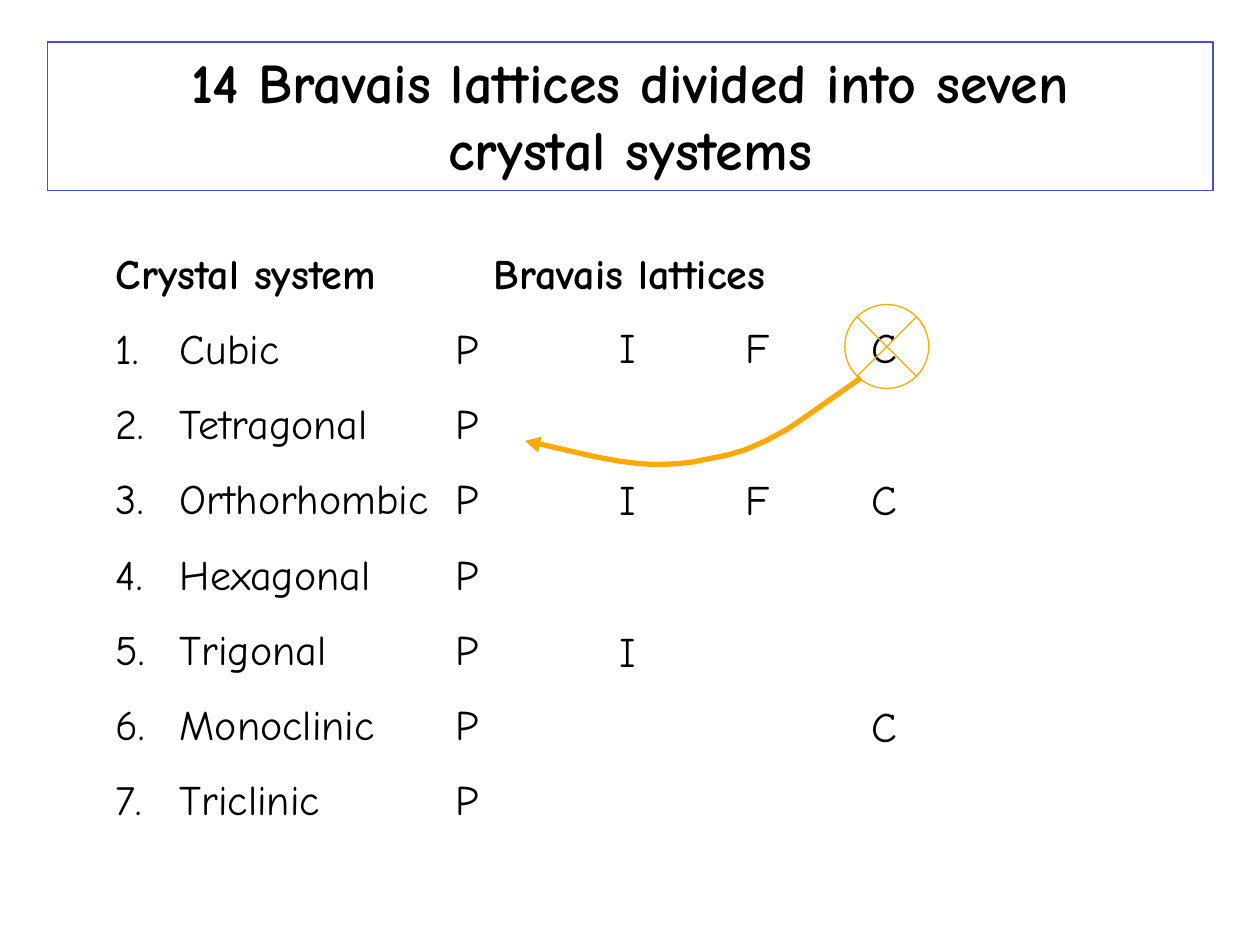
from lxml import etree
from pptx import Presentation
from pptx.dml.color import RGBColor
from pptx.enum import shapes, text
from pptx.oxml.ns import qn
from pptx.util import Pt

FONT = "Comic Neue"
BLACK = RGBColor(0x00, 0x00, 0x00)
BLUE = RGBColor(0x43, 0x4D, 0xD6)
ORANGE = RGBColor(0xFF, 0xA9, 0x00)

SYSTEMS = ["Cubic", "Tetragonal", "Orthorhombic", "Hexagonal",
           "Trigonal", "Monoclinic", "Triclinic"]
# Lattice letter: left edge and the rows (from 0) in which it stands
LATTICES = {"I": (354.25, [0, 2, 4]),
            "F": (426.25, [0, 2]),
            "C": (498.25, [0, 2, 5])}
FIRST_ROW, ROW_STEP = 183, 43.3
INDENT, LATTICE_TAB = 36.5, 216.7

CURVE = [(492, 216), (463.5, 236), (450.5, 245), (437.5, 252), (426, 257),
         (416, 260), (396, 264), (387.5, 265), (375, 265.5), (365.5, 265),
         (353.5, 263.5), (340, 261), (316, 255.5), (303, 252.5)]
ARROWHEAD = [(309.5, 249.5), (300, 252), (307.5, 258.5)]


def place(sp, left, top, width, height):
    sp.left, sp.top, sp.width, sp.height = map(Pt, (left, top, width, height))


def set_frame(tf, top_inset):
    tf.word_wrap = True
    tf.auto_size = text.MSO_AUTO_SIZE.NONE
    tf.vertical_anchor = text.MSO_ANCHOR.TOP
    tf.margin_left = tf.margin_right = tf.margin_bottom = 0
    tf.margin_top = Pt(top_inset)


def format_runs(p, size, bold=False):
    for r in p.runs:
        r.font.name = FONT
        r.font.size = Pt(size)
        r.font.bold = bold
        r.font.color.rgb = BLACK


def set_list_format(p, numbered):
    """Number the paragraph and set its tab stop, or remove its bullet."""
    pPr = p._p.get_or_add_pPr()
    if not numbered:
        pPr.set("marL", "0")
        pPr.set("indent", "0")
        etree.SubElement(pPr, qn("a:buNone"))
        return
    pPr.set("marL", str(Pt(INDENT)))
    pPr.set("indent", str(-Pt(INDENT)))
    etree.SubElement(pPr, qn("a:buFont"), typeface=FONT)
    etree.SubElement(pPr, qn("a:buAutoNum"), type="arabicPeriod")
    tabs = etree.SubElement(pPr, qn("a:tabLst"))
    etree.SubElement(tabs, qn("a:tab"), pos=str(Pt(LATTICE_TAB)), algn="l")


def fill_title(sp):
    place(sp, 27.25, 24, 666, 84.75)
    sp.line.color.rgb = BLUE
    sp.line.width = Pt(0.75)
    tf = sp.text_frame
    set_frame(tf, 3.6)
    tf.text = "14 Bravais lattices divided into seven\ncrystal systems"
    for p in tf.paragraphs:
        p.alignment = text.PP_ALIGN.CENTER
        p.line_spacing = Pt(38.2)
        format_runs(p, 32, bold=True)


def fill_systems(sp):
    place(sp, 66.25, 126.75, 230.5, 347)
    tf = sp.text_frame
    set_frame(tf, 14.4)
    tf.text = "\n".join(["Crystal system"] + [f"{name}\tP" for name in SYSTEMS])
    for i, p in enumerate(tf.paragraphs):
        p.space_before = Pt(14.2 if i else 0)
        set_list_format(p, numbered=i > 0)
        format_runs(p, 24, bold=i == 0)


def add_label(s, label, left, top, width, bold=False):
    sp = s.shapes.add_textbox(Pt(left), Pt(top), Pt(width), Pt(31))
    set_frame(sp.text_frame, 1)
    sp.text_frame.text = label
    format_runs(sp.text_frame.paragraphs[0], 24, bold)


def add_line(s, x1, y1, x2, y2):
    c = s.shapes.add_connector(shapes.MSO_CONNECTOR.STRAIGHT,
                               Pt(x1), Pt(y1), Pt(x2), Pt(y2))
    c.line.color.rgb = ORANGE
    c.line.width = Pt(0.75)
    etree.SubElement(c._element.spPr, qn("a:effectLst"))


def add_crossed_circle(s, cx, cy, radius):
    sp = s.shapes.add_shape(shapes.MSO_SHAPE.OVAL, Pt(cx - radius),
                            Pt(cy - radius), Pt(2 * radius), Pt(2 * radius))
    sp.shadow.inherit = False
    sp.fill.background()
    sp.line.color.rgb = ORANGE
    sp.line.width = Pt(0.75)
    d = radius * 0.5 ** 0.5
    add_line(s, cx - d, cy - d, cx + d, cy + d)
    add_line(s, cx + d, cy - d, cx - d, cy + d)


def add_outline(s, points, closed):
    start, *rest = [(Pt(x), Pt(y)) for x, y in points]
    fb = s.shapes.build_freeform(*start)
    fb.add_line_segments(rest, close=closed)
    sp = fb.convert_to_shape()
    sp.shadow.inherit = False
    return sp


def add_curved_arrow(s):
    curve = add_outline(s, CURVE, closed=False)
    curve.fill.background()
    curve.line.color.rgb = ORANGE
    curve.line.width = Pt(3)
    head = add_outline(s, ARROWHEAD, closed=True)
    head.fill.solid()
    head.fill.fore_color.rgb = ORANGE
    head.line.fill.background()


def main():
    prs = Presentation()
    prs.slide_width, prs.slide_height = Pt(720), Pt(540)
    s = prs.slides.add_slide(prs.slide_layouts[1])
    fill_title(s.shapes.title)
    fill_systems(s.placeholders[1])
    add_label(s, "Bravais lattices", 282.25, 140.4, 182, bold=True)
    for letter, (left, rows) in LATTICES.items():
        for row in rows:
            add_label(s, letter, left, FIRST_ROW + row * ROW_STEP, 16.5)
    add_crossed_circle(s, 506.75, 198, 24)
    add_curved_arrow(s)
    prs.save("out.pptx")


if __name__ == "__main__":
    main()
